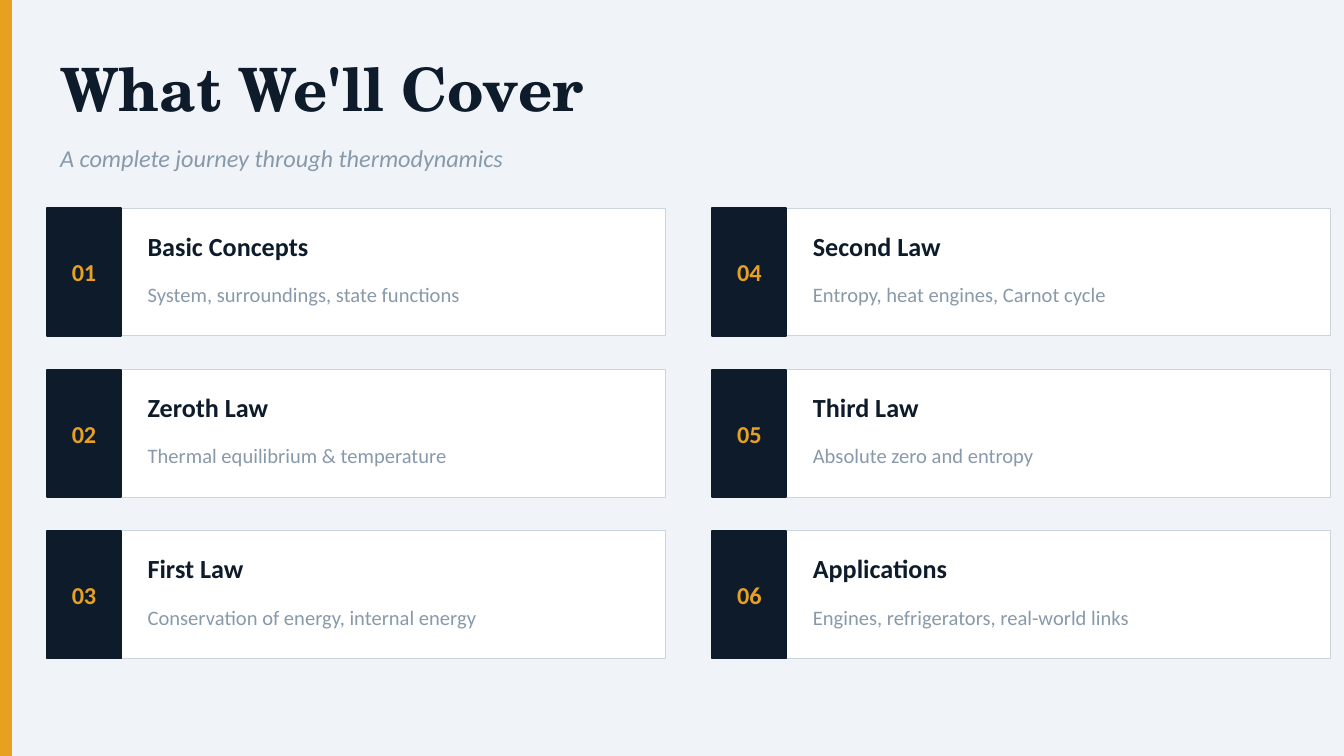
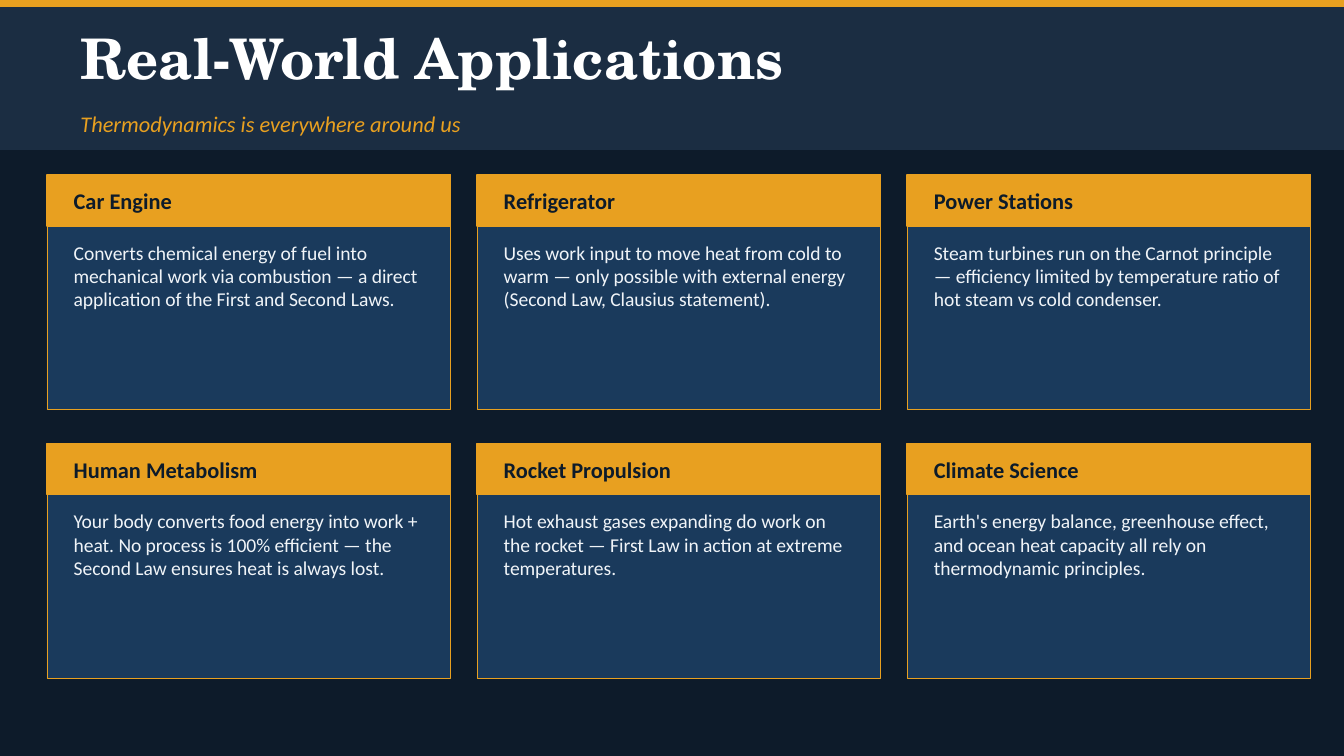
"""Build the overview and applications slides of a thermodynamics lecture."""
from pptx import Presentation
from pptx.dml.color import RGBColor
from pptx.enum.shapes import MSO_SHAPE as Preset
from pptx.enum.text import MSO_ANCHOR as Anchor, PP_ALIGN as Align
from pptx.util import Pt

COLORS = {
    "navy": "0D1B2A", "band": "1B2D42", "panel": "1A3A5C", "amber": "E8A020",
    "mist": "F0F4F8", "white": "FFFFFF", "border": "CBD5E0", "slate": "8899AA",
}
SERIF, SANS = "TeX Gyre Schola", "Calibri"
FORMATS = {
    "title": {"name": SERIF, "size": Pt(32), "bold": True},
    "banner title": {"name": SERIF, "size": Pt(30), "bold": True},
    "subtitle": {"name": SANS, "size": Pt(13), "italic": True},
    "banner subtitle": {"name": SANS, "size": Pt(12), "italic": True},
    "number": {"name": SANS, "size": Pt(13), "bold": True},
    "topic": {"name": SANS, "size": Pt(14), "bold": True},
    "summary": {"name": SANS, "size": Pt(11)},
    "heading": {"name": SANS, "size": Pt(12), "bold": True},
    "body": {"name": SANS, "size": Pt(10.5)},
}
WIDTH, HEIGHT = 720, 405
MARGIN = 25.2

TOPICS = [
    ("Basic Concepts", "System, surroundings, state functions"),
    ("Zeroth Law", "Thermal equilibrium & temperature"),
    ("First Law", "Conservation of energy, internal energy"),
    ("Second Law", "Entropy, heat engines, Carnot cycle"),
    ("Third Law", "Absolute zero and entropy"),
    ("Applications", "Engines, refrigerators, real-world links"),
]
APPLICATIONS = [
    ("Car Engine", "Converts chemical energy of fuel into mechanical work via combustion"
     " — a direct application of the First and Second Laws."),
    ("Refrigerator", "Uses work input to move heat from cold to warm"
     " — only possible with external energy (Second Law, Clausius statement)."),
    ("Power Stations", "Steam turbines run on the Carnot principle"
     " — efficiency limited by temperature ratio of hot steam vs cold condenser."),
    ("Human Metabolism", "Your body converts food energy into work + heat."
     " No process is 100% efficient — the Second Law ensures heat is always lost."),
    ("Rocket Propulsion", "Hot exhaust gases expanding do work on the rocket"
     " — First Law in action at extreme temperatures."),
    ("Climate Science", "Earth's energy balance, greenhouse effect,"
     " and ocean heat capacity all rely on thermodynamic principles."),
]


class Deck:
    """Hold the shared style and the current slide."""

    def __init__(self):
        self.presentation = Presentation()
        self.presentation.slide_width = Pt(WIDTH)
        self.presentation.slide_height = Pt(HEIGHT)
        self.slide = None

    def color(self, key):
        return RGBColor.from_string(COLORS[key])

    def new_slide(self, background):
        self.slide = self.presentation.slides.add_slide(self.presentation.slide_layouts[6])
        fill = self.slide.background.fill
        fill.solid()
        fill.fore_color.rgb = self.color(background)

    def block(self, left, top, width, height, fill, line=None, weight=1):
        rect = self.slide.shapes.add_shape(
            Preset.RECTANGLE, Pt(left), Pt(top), Pt(width), Pt(height))
        rect.shadow.inherit = False
        rect.fill.solid()
        rect.fill.fore_color.rgb = self.color(fill)
        rect.line.color.rgb = self.color(line or fill)
        rect.line.width = Pt(weight)

    def text(self, left, top, width, height, words, style, color,
             anchor=Anchor.MIDDLE, align=None, inset=True):
        box = self.slide.shapes.add_textbox(Pt(left), Pt(top), Pt(width), Pt(height))
        frame = box.text_frame
        settings = {"word_wrap": True, "vertical_anchor": anchor}
        if not inset:
            settings.update(dict.fromkeys(
                ("margin_left", "margin_top", "margin_right", "margin_bottom"), 0))
        for attribute, value in settings.items():
            setattr(frame, attribute, value)
        paragraph = frame.paragraphs[0]
        paragraph.alignment = align
        run = paragraph.add_run()
        run.text = words
        for attribute, value in FORMATS[style].items():
            setattr(run.font, attribute, value)
        run.font.color.rgb = self.color(color)

    def topic_card(self, left, top, number, topic, summary):
        height, badge = 68.4, 39.6
        self.block(left, top, 331.2, height, "white", "border", 0.5)
        self.block(left, top, badge, height, "navy")
        self.text(left, top, badge, height, f"{number:02}", "number", "amber",
                  align=Align.CENTER, inset=False)
        self.text(left + 46.8, top + 7.2, 273.6, 25.92, topic, "topic", "navy")
        self.text(left + 46.8, top + 34.56, 273.6, 23.04, summary, "summary", "slate")

    def application_card(self, left, top, heading, body):
        width, header, pad = 216, 27.36, 7.2
        self.block(left, top, width, 126, "panel", "amber", 0.5)
        self.block(left, top, width, header, "amber")
        self.text(left + pad, top, width - 2 * pad, header, heading, "heading", "navy")
        self.text(left + pad, top + 31.68, width - 2 * pad, 86.4, body, "body", "mist",
                  anchor=Anchor.TOP)


def build_overview(deck):
    deck.new_slide("mist")
    deck.block(0, 0, 5.76, HEIGHT, "amber")
    deck.text(MARGIN, 21.6, 648, 50.4, "What We'll Cover", "title", "navy")
    deck.text(MARGIN, 72, 504, 25.2, "A complete journey through thermodynamics",
              "subtitle", "slate")
    for index, (topic, summary) in enumerate(TOPICS):
        column, row = divmod(index, 3)
        deck.topic_card(MARGIN + 356.4 * column, 111.6 + 86.4 * row,
                        index + 1, topic, summary)


def build_applications(deck):
    deck.new_slide("navy")
    deck.block(0, 0, WIDTH, 4.32, "amber")
    deck.block(0, 4.32, WIDTH, 75.6, "band")
    deck.text(36, 7.2, 648, 46.8, "Real-World Applications", "banner title", "white")
    deck.text(36, 54.72, 504, 23.04, "Thermodynamics is everywhere around us",
              "banner subtitle", "amber")
    for index, (heading, body) in enumerate(APPLICATIONS):
        row, column = divmod(index, 3)
        deck.application_card(MARGIN + 230.4 * column, 93.6 + 144 * row, heading, body)


def main():
    deck = Deck()
    build_overview(deck)
    build_applications(deck)
    deck.presentation.save("out.pptx")


if __name__ == "__main__":
    main()
